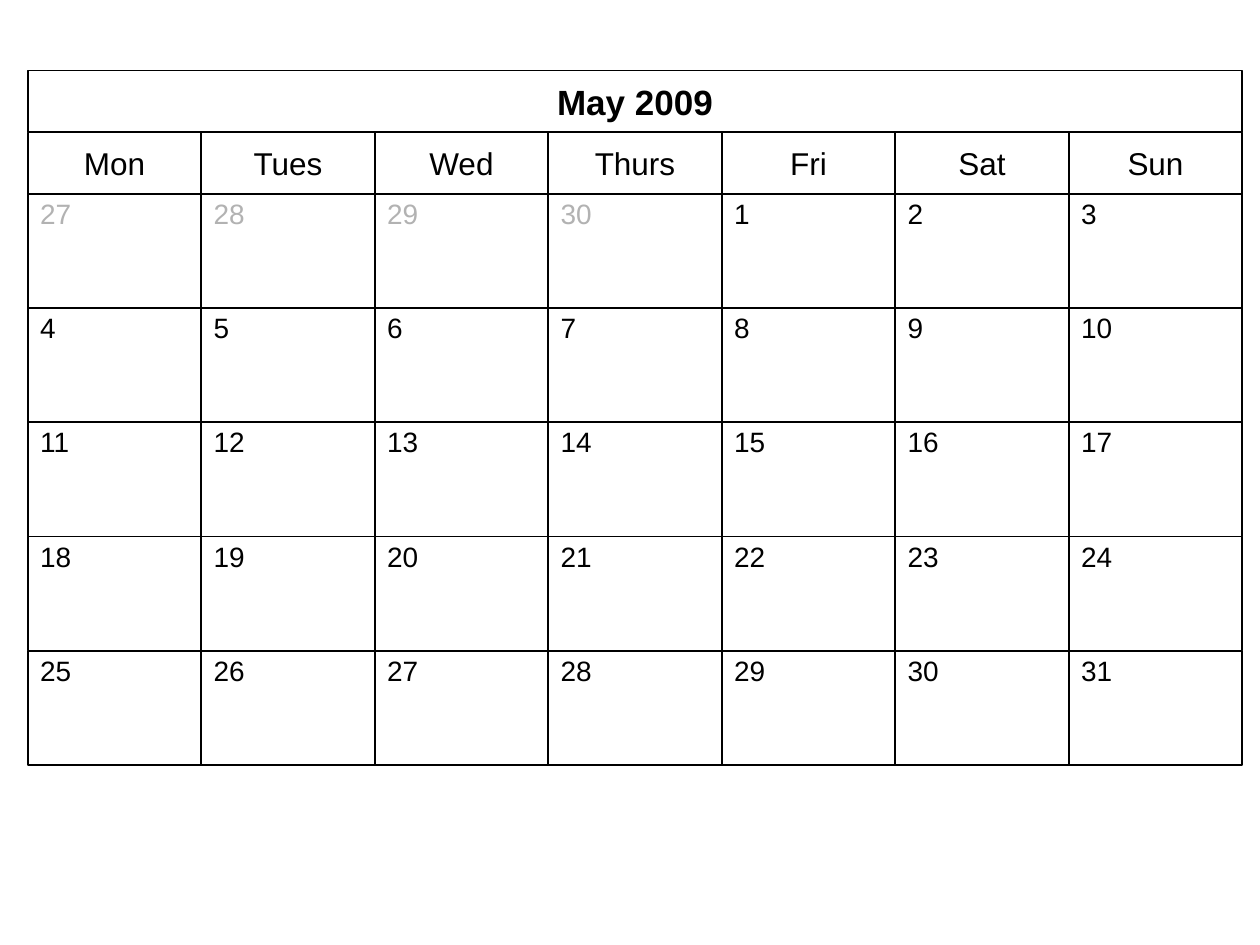
from pptx import Presentation
from pptx.dml.color import RGBColor
from pptx.enum.shapes import MSO_SHAPE
from pptx.enum.text import MSO_ANCHOR, PP_ALIGN
from pptx.util import Inches, Pt

BLACK, WHITE, GRAY = "000000", "FFFFFF", "B2B2B2"
WEEKDAYS = ["Mon", "Tues", "Wed", "Thurs", "Fri", "Sat", "Sun"]
WEEKS = 5
DAYS_BEFORE_FIRST = 4
PREVIOUS_MONTH_LENGTH = 30


def color(hex_string):
    return RGBColor.from_string(hex_string)


def add_cell(slide, box, text, size, text_color=BLACK, bold=False, centered=True):
    shape = slide.shapes.add_shape(MSO_SHAPE.RECTANGLE, *map(Inches, box))
    shape.shadow.inherit = False
    shape.fill.solid()
    shape.fill.fore_color.rgb = color(WHITE)
    shape.line.color.rgb = color(BLACK)
    shape.line.width = Pt(1)

    frame = shape.text_frame
    frame.word_wrap = True
    frame.margin_left = frame.margin_right = Inches(0.1)
    frame.margin_top = frame.margin_bottom = Inches(0.02)
    frame.vertical_anchor = MSO_ANCHOR.MIDDLE if centered else MSO_ANCHOR.TOP
    frame.text = text

    paragraph = frame.paragraphs[0]
    paragraph.alignment = PP_ALIGN.CENTER if centered else PP_ALIGN.LEFT
    properties = paragraph._p.get_or_add_pPr()
    properties.set("marL", str(Inches(0.38)))
    properties.set("indent", str(Inches(-0.38)))
    font = paragraph.runs[0].font
    font.name = "Arial"
    font.size = Pt(size)
    font.bold = bold
    font.color.rgb = color(text_color)


def add_weekday_row(slide, left, top, width, height):
    column_width = width / len(WEEKDAYS)
    for column, weekday in enumerate(WEEKDAYS):
        box = (left + column * column_width, top, column_width, height)
        add_cell(slide, box, weekday, 18)


def add_day_grid(slide, left, top, width, height):
    column_width = width / len(WEEKDAYS)
    row_height = height / WEEKS
    for index in range(WEEKS * len(WEEKDAYS)):
        row, column = divmod(index, len(WEEKDAYS))
        day = index + 1 - DAYS_BEFORE_FIRST
        in_month = day > 0
        label = day if in_month else day + PREVIOUS_MONTH_LENGTH
        box = (left + column * column_width, top + row * row_height,
               column_width, row_height)
        add_cell(slide, box, str(label), 16, BLACK if in_month else GRAY,
                 centered=False)


def add_calendar(slide, left, top, width, height):
    header_height = 0.49
    days_top = top + 2 * header_height
    days_height = height - 2 * header_height
    add_day_grid(slide, left, days_top, width, days_height)
    add_weekday_row(slide, left, top + header_height, width, header_height)
    add_cell(slide, (left, top, width, header_height), "May 2009", 20, bold=True)


def main():
    presentation = Presentation()
    presentation.slide_width = Inches(10)
    presentation.slide_height = Inches(7.5)
    slide = presentation.slides.add_slide(presentation.slide_layouts[6])
    slide.background.fill.solid()
    slide.background.fill.fore_color.rgb = color(WHITE)
    add_calendar(slide, 0.22, 0.56, 9.64, 5.51)
    presentation.save("out.pptx")


if __name__ == "__main__":
    main()
